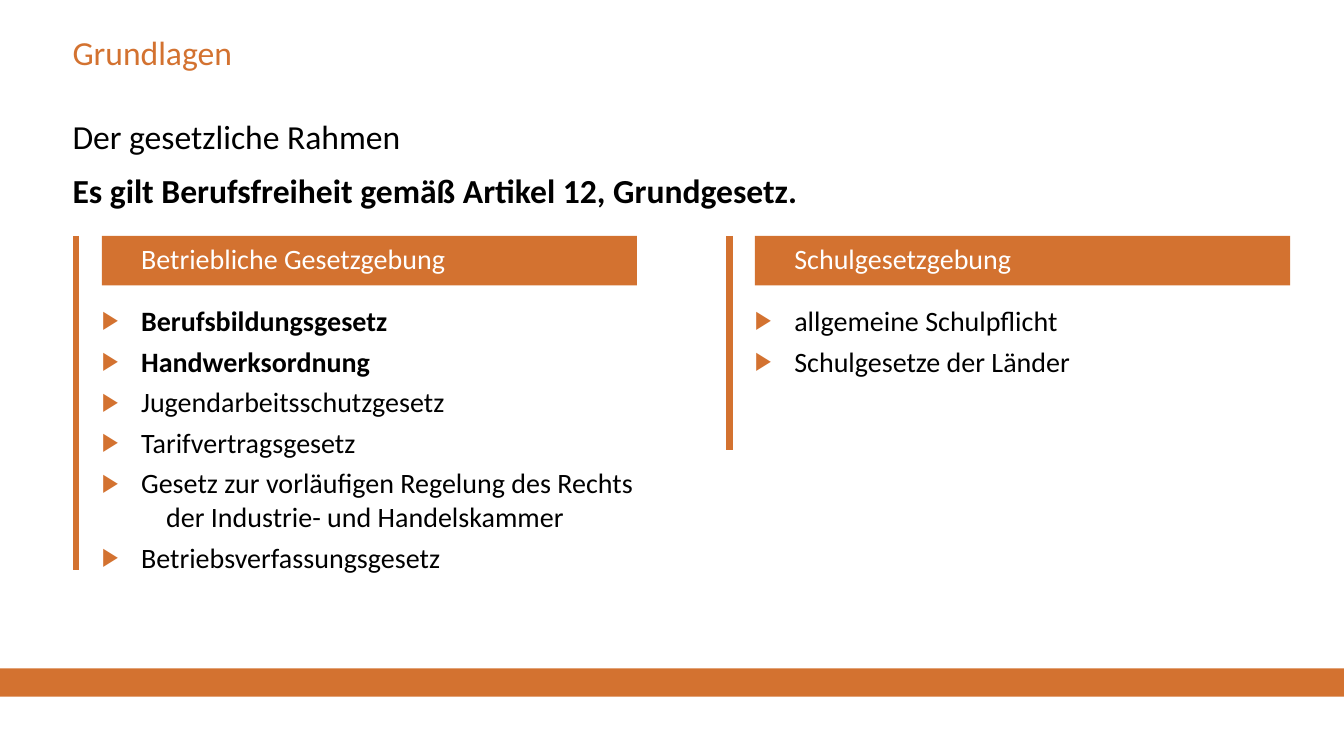
from lxml import etree
from pptx import Presentation
from pptx.dml.color import RGBColor
from pptx.enum.shapes import MSO_CONNECTOR, MSO_SHAPE
from pptx.enum.text import MSO_ANCHOR, MSO_AUTO_SIZE, PP_ALIGN
from pptx.oxml.ns import qn
from pptx.util import Pt

STRAIGHT = MSO_CONNECTOR.STRAIGHT
RECTANGLE = MSO_SHAPE.RECTANGLE
TOP, MIDDLE = MSO_ANCHOR.TOP, MSO_ANCHOR.MIDDLE
LEFT = PP_ALIGN.LEFT
NO_AUTOFIT = MSO_AUTO_SIZE.NONE

COLORS = {"accent": "D37230", "text": "000000", "heading": "FFFFFF"}
FONT = "Calibri"
INDENT = 28.1
WRAP_INDENT = 46
COLUMN_TOP = 168.5
COLUMN_WIDTH = 382.3
RULE_GAP = 18.3

COLUMNS = [
    {"left": 72.7, "rule": 238.3, "heading": "Betriebliche Gesetzgebung",
     "items": [("Berufsbildungsgesetz", "bold"),
               ("Handwerksordnung", "bold"),
               ("Jugendarbeitsschutzgesetz", "plain"),
               ("Tarifvertragsgesetz", "plain"),
               ("Gesetz zur vorläufigen Regelung des Rechts", "plain"),
               ("der Industrie- und Handelskammer", "wrapped"),
               ("Betriebsverfassungsgesetz", "plain")]},
    {"left": 539.3, "rule": 152.6, "heading": "Schulgesetzgebung",
     "items": [("allgemeine Schulpflicht", "plain"),
               ("Schulgesetze der Länder", "plain")]},
]


def color(name):
    return RGBColor.from_string(COLORS[name])


def set_attributes(target, values):
    for name, value in values.items():
        setattr(target, name, value)


def place(sp, left, top, width, height):
    set_attributes(sp, {"left": Pt(left), "top": Pt(top),
                        "width": Pt(width), "height": Pt(height)})


def frame(sp, anchor=TOP, inset=0):
    tf = sp.text_frame
    set_attributes(tf, {"word_wrap": True, "auto_size": NO_AUTOFIT,
                        "vertical_anchor": anchor, "margin_left": Pt(inset),
                        "margin_top": 0, "margin_right": 0,
                        "margin_bottom": 0})
    return tf


def write(p, text, size, color_name, bold=False, before=0, spacing=1.0):
    set_attributes(p, {"alignment": LEFT, "space_before": Pt(before),
                       "line_spacing": spacing})
    r = p.add_run()
    r.text = text
    set_attributes(r.font, {"name": FONT, "size": Pt(size), "bold": bold})
    r.font.color.rgb = color(color_name)


def next_paragraph(tf, index):
    return tf.paragraphs[0] if index == 0 else tf.add_paragraph()


def indent(p, margin, first=0):
    pPr = p._p.get_or_add_pPr()
    pPr.set("marL", str(Pt(margin)))
    pPr.set("indent", str(Pt(first)))
    return pPr


def add_bullet(p):
    pPr = indent(p, INDENT, -INDENT)
    buClr = etree.SubElement(pPr, qn("a:buClr"))
    etree.SubElement(buClr, qn("a:srgbClr"), val=COLORS["accent"])
    etree.SubElement(pPr, qn("a:buSzPct"), val="90000")
    etree.SubElement(pPr, qn("a:buChar"), char="▶")


def add_footer_band(s):
    sp = s.shapes.add_shape(RECTANGLE, 0, Pt(477.4), Pt(960), Pt(20.2))
    sp.shadow.inherit = False
    sp.fill.solid()
    sp.fill.fore_color.rgb = color("accent")
    sp.line.fill.background()


def add_rule(s, x, top, height):
    line = s.shapes.add_connector(STRAIGHT, Pt(x), Pt(top),
                                  Pt(x), Pt(top + height))
    line.line.color.rgb = color("accent")
    line.line.width = Pt(4.5)
    etree.SubElement(line._element.spPr, qn("a:effectLst"))


def fill_title(sp, text):
    place(sp, 51.8, 23, 708.5, 35.3)
    write(frame(sp).paragraphs[0], text, 24, "accent")


def add_intro(s, lines):
    sp = s.shapes.add_textbox(Pt(51.8), Pt(82.8), Pt(870.5), Pt(79.2))
    tf = frame(sp)
    for i, (text, bold) in enumerate(lines):
        write(next_paragraph(tf, i), text, 24, "text", bold, 10 if i else 0)


def fill_heading(sp, left, text):
    place(sp, left, COLUMN_TOP, COLUMN_WIDTH, 35.3)
    sp.fill.solid()
    sp.fill.fore_color.rgb = color("accent")
    p = frame(sp, MIDDLE, INDENT).paragraphs[0]
    write(p, text, 20, "heading", spacing=0.9)


def fill_list(sp, left, items):
    place(sp, left, 216.7, COLUMN_WIDTH, 206)
    tf = frame(sp)
    for i, (text, style) in enumerate(items):
        p = next_paragraph(tf, i)
        wrapped = style == "wrapped"
        before = 0 if i == 0 or wrapped else 5
        write(p, text, 20, "text", style == "bold", before)
        if wrapped:
            etree.SubElement(indent(p, WRAP_INDENT), qn("a:buNone"))
        else:
            add_bullet(p)


def main():
    prs = Presentation()
    prs.slide_width, prs.slide_height = Pt(960), Pt(540)
    s = prs.slides.add_slide(prs.slide_layouts.get_by_name("Comparison"))
    add_footer_band(s)
    title, *bodies = s.placeholders
    fill_title(title, "Grundlagen")
    add_intro(s, [
        ("Der gesetzliche Rahmen", False),
        ("Es gilt Berufsfreiheit gemäß Artikel 12, Grundgesetz.", True),
    ])
    for column, heading, body in zip(COLUMNS, bodies[::2], bodies[1::2]):
        fill_heading(heading, column["left"], column["heading"])
        fill_list(body, column["left"], column["items"])
        add_rule(s, column["left"] - RULE_GAP, COLUMN_TOP, column["rule"])
    prs.save("out.pptx")


if __name__ == "__main__":
    main()
